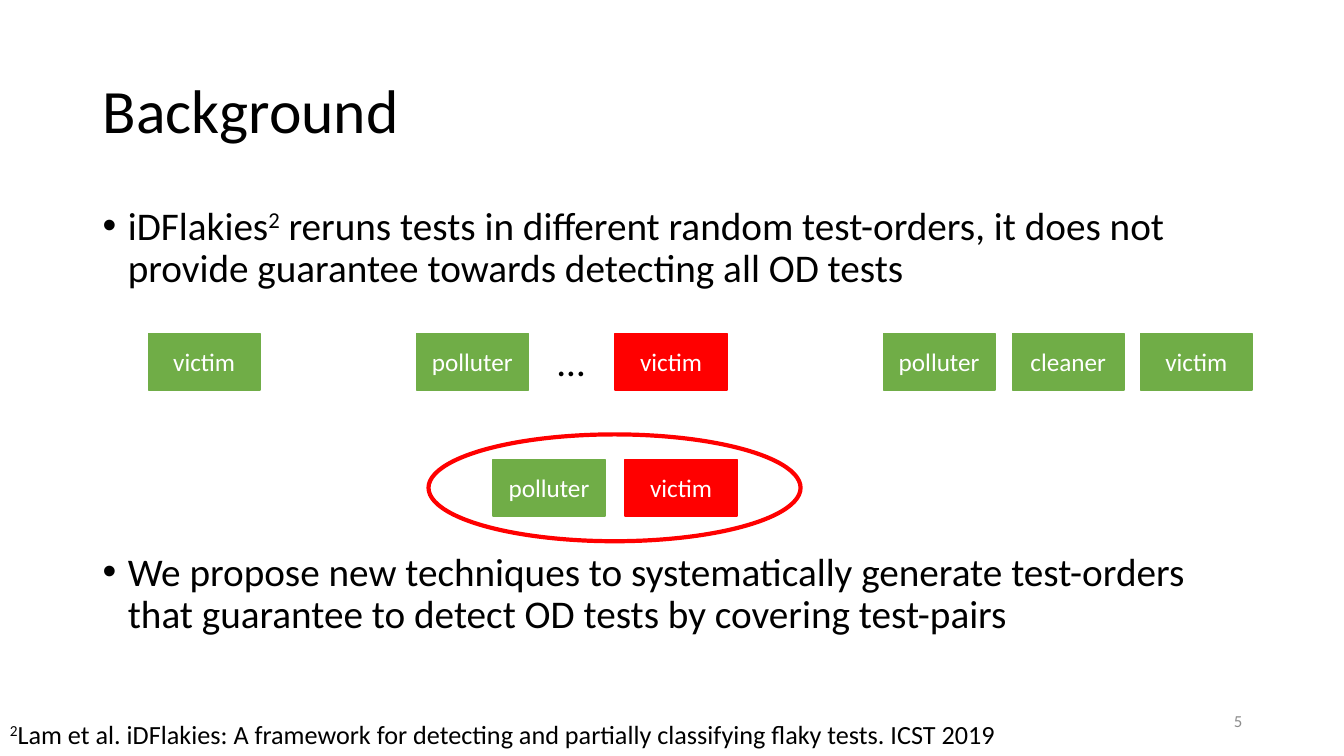
from pptx import Presentation
from pptx import util as u
from pptx.dml.color import RGBColor
from pptx.enum import shapes, text
from lxml import etree

THEME = {
    "font": "Calibri",
    "black": RGBColor(0, 0, 0),
    "white": RGBColor(255, 255, 255),
    "gray": RGBColor(0x8C, 0x8C, 0x8C),
    "pass": RGBColor(0x70, 0xAD, 0x47),
    "fail": RGBColor(255, 0, 0),
    "title": 44, "body": 28, "cite": 18.7, "test": 18, "number": 12,
}

deck = Presentation()
deck.slide_width, deck.slide_height = u.Inches(13.33), u.Inches(7.5)
page = deck.slides.add_slide(deck.slide_layouts[6])


def write(shape, parts, size, color="black", align="LEFT", anchor="MIDDLE"):
    """Fill a shape with one paragraph; a part starting with ^ is superscript."""
    frame = shape.text_frame
    frame.word_wrap = True
    frame.vertical_anchor = text.MSO_ANCHOR[anchor]
    para = frame.paragraphs[0]
    para.alignment = text.PP_ALIGN[align]
    for part in parts:
        span = para.add_run()
        span.text = part.lstrip("^")
        span.font.name = THEME["font"]
        span.font.size = u.Pt(THEME[size])
        span.font.color.rgb = THEME[color]
        if part.startswith("^"):
            span.font._element.set("baseline", "30000")
    return para


def add_text(left, top, width, height, parts, size, **style):
    box = page.shapes.add_textbox(*map(u.Inches, (left, top, width, height)))
    return write(box, parts, size, **style)


# Title
title = add_text(0.92, 0.4, 11.5, 1.45, ["Background"], "title")
title.line_spacing = 0.9

# Bullets
bullets = [
    (2, 2.75, ["iDFlakies", "^2", " reruns tests in different random test-orders, "
               "it does not provide guarantee towards detecting all OD tests"]),
    (5.43, 1.59, ["We propose new techniques to systematically generate test-orders "
                  "that guarantee to detect OD tests by covering test-pairs"]),
]
for top, height, parts in bullets:
    para = add_text(0.92, top, 11.5, height, parts, "body", anchor="TOP")
    para.line_spacing = 0.9
    para.space_before = u.Pt(10)
    props = para._p.get_or_add_pPr()
    props.set("marL", str(u.Inches(0.25)))
    props.set("indent", str(u.Inches(-0.25)))
    namespace = etree.QName(props).namespace
    etree.SubElement(props, f"{{{namespace}}}buFont", typeface="Arial")
    etree.SubElement(props, f"{{{namespace}}}buChar", char="•")

# Test orders: row top, then left, name and outcome of each test
orders = [
    (3.31, [(1.47, "victim", "pass"),
            (4.13, "polluter", "pass"), (6.1, "victim", "fail"),
            (8.76, "polluter", "pass"), (10.04, "cleaner", "pass"),
            (11.31, "victim", "pass")]),
    (4.56, [(4.89, "polluter", "pass"), (6.2, "victim", "fail")]),
]
for top, tests in orders:
    for left, name, outcome in tests:
        test = page.shapes.add_shape(shapes.MSO_SHAPE.RECTANGLE,
                                     *map(u.Inches, (left, top, 1.11, 0.56)))
        test.shadow.inherit = False
        test.fill.solid()
        test.fill.fore_color.rgb = THEME[outcome]
        test.line.color.rgb = THEME[outcome]
        test.line.width = u.Pt(1)
        write(test, [name], "test", color="white", align="CENTER")
add_text(5.43, 3.29, 0.47, 0.57, ["…"], "body", align="CENTER")

# Ring around the test pair
ring = page.shapes.add_shape(shapes.MSO_SHAPE.OVAL,
                             *map(u.Inches, (4.25, 4.31, 3.69, 1.06)))
ring.shadow.inherit = False
ring.fill.background()
ring.line.color.rgb = THEME["fail"]
ring.line.width = u.Pt(3)

# Citation and page number
add_text(0, 7.08, 12.18, 0.42,
         ["^2", "Lam et al. iDFlakies: A framework for detecting and partially "
          "classifying flaky tests. ICST 2019"], "cite", anchor="TOP")
add_text(9.42, 6.95, 3, 0.4, ["5"], "number", color="gray", align="RIGHT")

deck.save("out.pptx")
